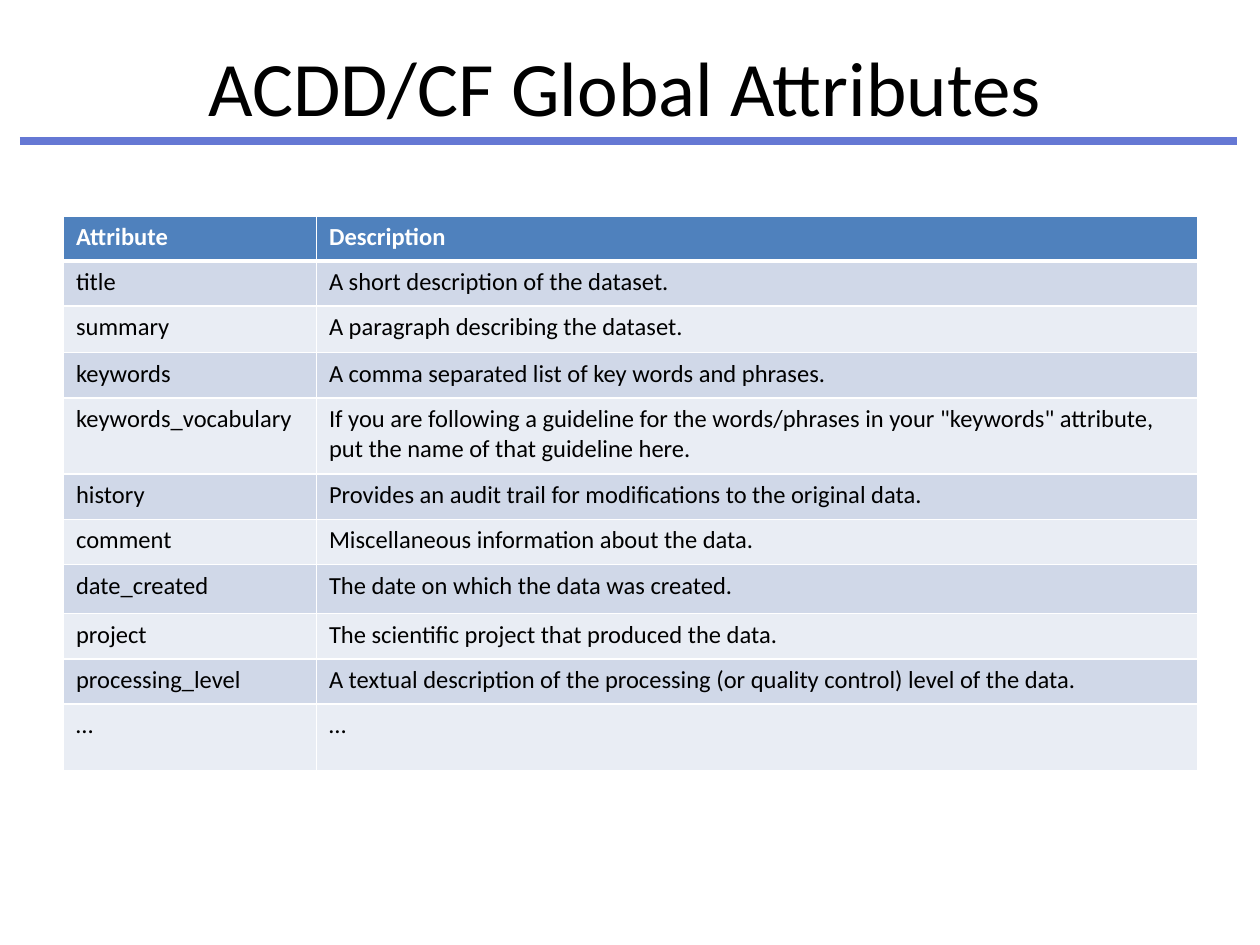
from lxml.etree import SubElement
from pptx import Presentation
from pptx.dml.color import RGBColor
from pptx.enum.shapes import MSO_CONNECTOR
from pptx.enum.text import MSO_ANCHOR, PP_ALIGN
from pptx.oxml.ns import qn
from pptx.util import Cm, Pt

BLACK = RGBColor(0x00, 0x00, 0x00)
WHITE = RGBColor(0xFF, 0xFF, 0xFF)
RULE_BLUE = RGBColor(0x65, 0x78, 0xD4)
HEADER_BLUE = RGBColor(0x4F, 0x81, 0xBD)
BAND_DARK = RGBColor(0xD0, 0xD8, 0xE8)
BAND_LIGHT = RGBColor(0xE9, 0xED, 0xF4)
FONT = "Calibri"

# Attribute, description, row height in cm
ATTRIBUTES = [
    ("Attribute", "Description", 0.91),
    ("title", "A short description of the dataset.", 0.91),
    ("summary", "A paragraph describing the dataset.", 0.94),
    ("keywords", "A comma separated list of key words and phrases.", 0.91),
    ("keywords_vocabulary",
     'If you are following a guideline for the words/phrases in your '
     '"keywords" attribute, put the name of that guideline here.', 1.54),
    ("history",
     "Provides an audit trail for modifications to the original data.", 0.91),
    ("comment", "Miscellaneous information about the data.", 0.91),
    ("date_created", "The date on which the data was created.", 0.99),
    ("project", "The scientific project that produced the data.", 0.91),
    ("processing_level",
     "A textual description of the processing (or quality control) level "
     "of the data.", 0.91),
    ("…", "…", 1.35),
]


def add_run(paragraph, text, size, color, bold=False):
    run = paragraph.add_run()
    run.text = text
    run.font.name = FONT
    run.font.size = Pt(size)
    run.font.bold = bold
    run.font.color.rgb = color


def add_rule(slide, left, top, width):
    rule = slide.shapes.add_connector(
        MSO_CONNECTOR.STRAIGHT, Cm(left), Cm(top), Cm(left + width), Cm(top))
    rule.line.color.rgb = RULE_BLUE
    rule.line.width = Pt(4.5)
    SubElement(rule._element.spPr, qn("a:effectLst"))


def add_title(slide, left, top, width, height):
    title = slide.shapes.add_textbox(Cm(left), Cm(top), Cm(width), Cm(height))
    frame = title.text_frame
    frame.word_wrap = True
    frame.vertical_anchor = MSO_ANCHOR.MIDDLE
    heading = frame.paragraphs[0]
    heading.alignment = PP_ALIGN.CENTER
    add_run(heading, "ACDD/CF Global Attributes", 44, BLACK)


def set_borders(cell, bottom_width):
    properties = cell._tc.get_or_add_tcPr()
    widths = {"a:lnL": 1, "a:lnR": 1, "a:lnT": 1, "a:lnB": bottom_width}
    for side, width in widths.items():
        border = SubElement(properties, qn(side), w=str(Pt(width)))
        fill = SubElement(border, qn("a:solidFill"))
        SubElement(fill, qn("a:srgbClr"), val=str(WHITE))


def add_attribute_table(slide, left, top, width, name_width):
    height = sum(row_height for _, _, row_height in ATTRIBUTES)
    table = slide.shapes.add_table(
        len(ATTRIBUTES), 2, Cm(left), Cm(top), Cm(width), Cm(height)).table
    table.columns[0].width = Cm(name_width)
    table.columns[1].width = Cm(width - name_width)

    for index, (name, description, row_height) in enumerate(ATTRIBUTES):
        is_header = index == 0
        band = BAND_DARK if index % 2 else BAND_LIGHT
        table.rows[index].height = Cm(row_height)
        for cell, text in zip(table.rows[index].cells, (name, description)):
            # Borders come before the fill in the cell properties
            set_borders(cell, 3 if is_header else 1)
            cell.fill.solid()
            cell.fill.fore_color.rgb = HEADER_BLUE if is_header else band
            add_run(cell.text_frame.paragraphs[0], text, 14,
                    WHITE if is_header else BLACK, is_header)


def main():
    presentation = Presentation()
    presentation.slide_width = Cm(25.4)
    presentation.slide_height = Cm(19.05)
    slide = presentation.slides.add_slide(presentation.slide_layouts[6])

    add_rule(slide, 0.4, 2.84, 24.54)
    add_title(slide, 2.52, 0.13, 20.16, 3.18)
    add_attribute_table(slide, 1.28, 4.35, 22.86, 5.1)

    presentation.save("out.pptx")


if __name__ == "__main__":
    main()
